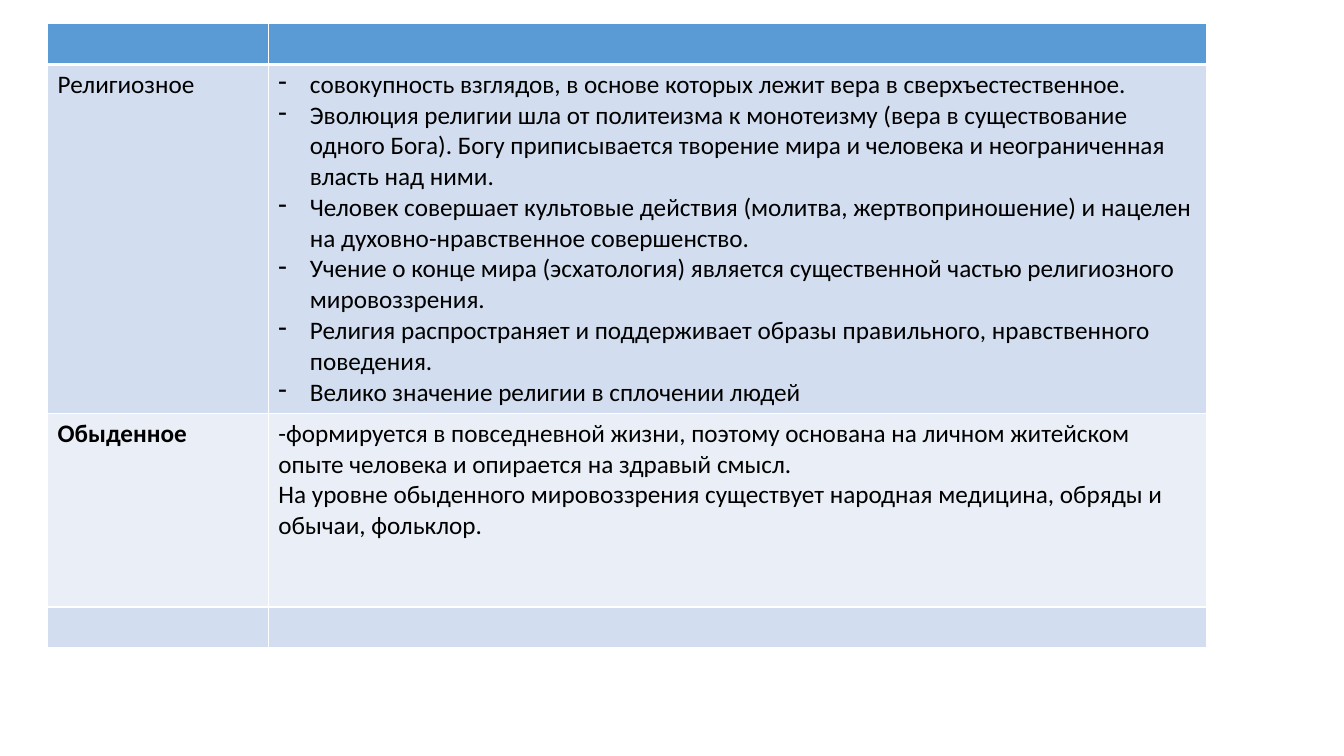
"""Slide with a table of the religious and everyday worldviews."""
from lxml.etree import SubElement
from pptx import Presentation
from pptx.dml.color import RGBColor
from pptx.oxml.ns import qn
from pptx.util import Pt

HEADER = RGBColor(0x5B, 0x9B, 0xD5)
BAND_DARK = RGBColor(0xD2, 0xDE, 0xEF)
BAND_LIGHT = RGBColor(0xEA, 0xEF, 0xF7)
BLACK = RGBColor(0, 0, 0)
WHITE = RGBColor(0xFF, 0xFF, 0xFF)

RELIGIOUS = [
    "совокупность взглядов, в основе которых лежит вера в сверхъестественное.",
    "Эволюция религии шла от политеизма к монотеизму (вера в существование одного Бога). "
    "Богу приписывается творение мира и человека и неограниченная власть над ними.",
    "Человек совершает культовые действия (молитва, жертвоприношение) и нацелен "
    "на духовно-нравственное совершенство.",
    "Учение о конце мира (эсхатология) является существенной частью религиозного мировоззрения.",
    "Религия распространяет и поддерживает образы правильного, нравственного поведения.",
    "Велико значение религии в сплочении людей",
]
EVERYDAY = [
    "-формируется в повседневной жизни, поэтому основана на личном житейском опыте человека "
    "и опирается на здравый смысл.",
    "На уровне обыденного мировоззрения существует народная медицина, обряды и обычаи, фольклор.",
]


def write(cell, lines, bold=False, dashed=False):
    frame = cell.text_frame
    for number, line in enumerate(lines):
        paragraph = frame.add_paragraph() if number else frame.paragraphs[0]
        run = paragraph.add_run()
        run.text = line
        run.font.name = "Calibri"
        run.font.size = Pt(18)
        run.font.bold = bold
        run.font.color.rgb = BLACK
        if dashed:
            properties = paragraph._p.get_or_add_pPr()
            properties.set("marL", str(Pt(22.5)))
            properties.set("indent", str(-Pt(22.5)))
            SubElement(properties, qn("a:buFontTx"))
            SubElement(properties, qn("a:buChar"), char="-")


def add_borders(cell, bottom_width):
    properties = cell._tc.get_or_add_tcPr()
    for side, width in (("L", 1), ("R", 1), ("T", 1), ("B", bottom_width)):
        line = SubElement(properties, qn(f"a:ln{side}"), w=str(Pt(width)))
        fill = SubElement(line, qn("a:solidFill"))
        SubElement(fill, qn("a:srgbClr"), val=str(WHITE))


presentation = Presentation()
presentation.slide_width = Pt(960)
presentation.slide_height = Pt(540)
slide = presentation.slides.add_slide(presentation.slide_layouts[6])

row_heights = [29.2, 249.2, 138.4, 29.2]
column_widths = [157.7, 670.3]
row_fills = [HEADER, BAND_DARK, BAND_LIGHT, BAND_DARK]
worldviews = slide.shapes.add_table(
    len(row_heights), len(column_widths),
    Pt(34), Pt(16.8), Pt(sum(column_widths)), Pt(sum(row_heights)),
).table

for column, width in zip(worldviews.columns, column_widths):
    column.width = Pt(width)
for index, (row, height, color) in enumerate(zip(worldviews.rows, row_heights, row_fills)):
    row.height = Pt(height)
    for cell in row.cells:
        add_borders(cell, bottom_width=1 if index else 3)
        cell.fill.solid()
        cell.fill.fore_color.rgb = color

write(worldviews.cell(1, 0), ["Религиозное"])
write(worldviews.cell(1, 1), RELIGIOUS, dashed=True)
write(worldviews.cell(2, 0), ["Обыденное"], bold=True)
write(worldviews.cell(2, 1), EVERYDAY)

presentation.save("out.pptx")
